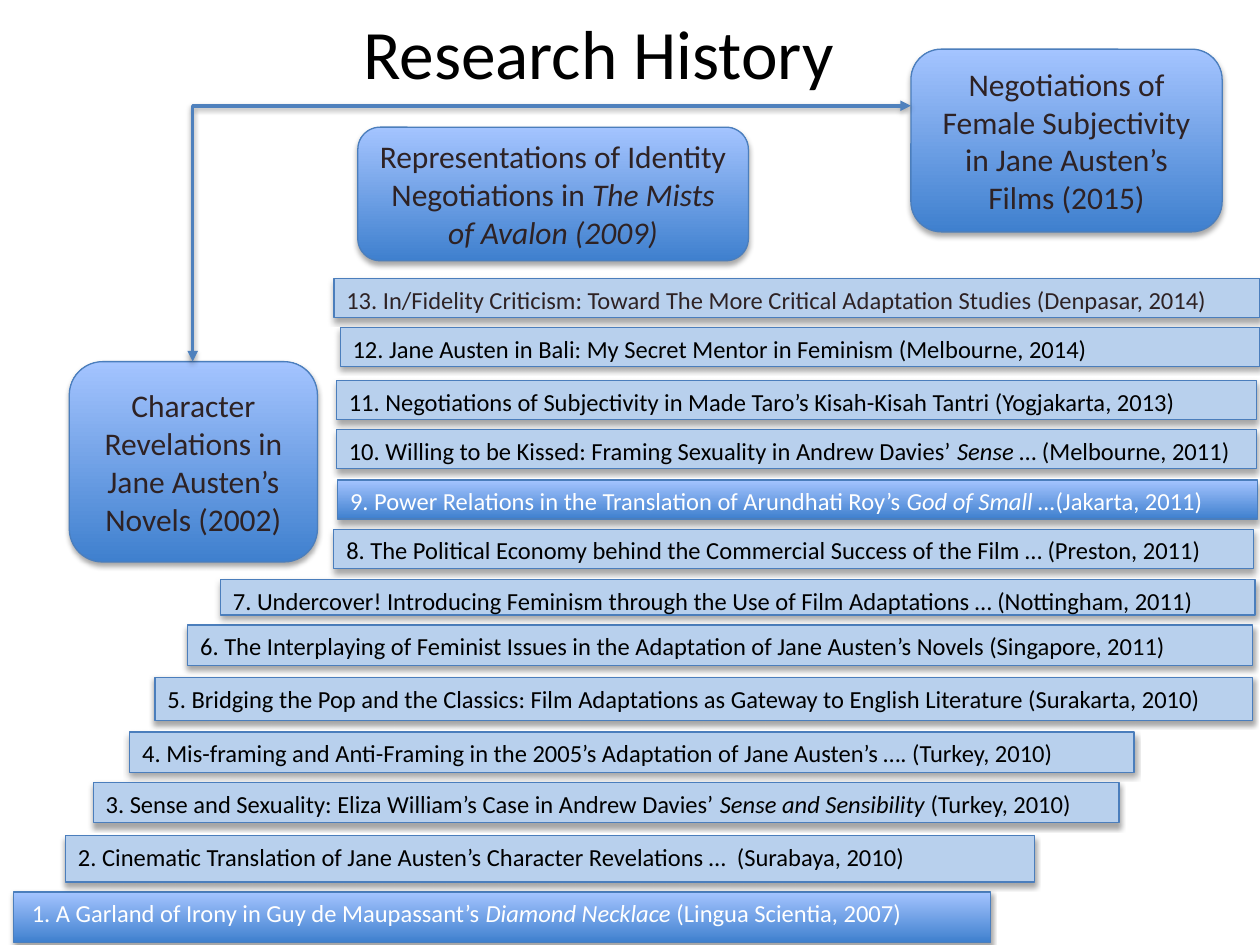
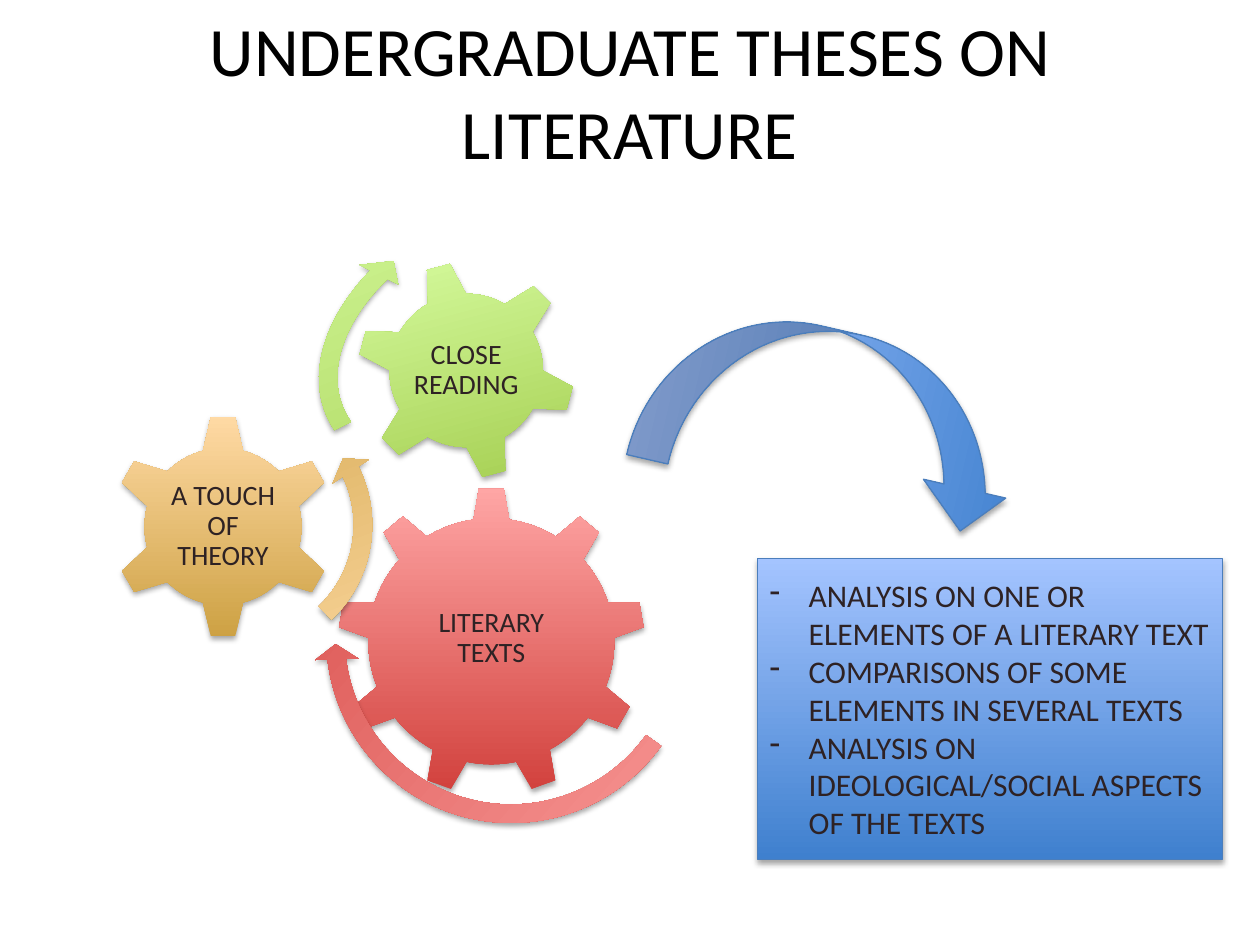
"""Builds two slides on research history and undergraduate theses on literature."""
from dataclasses import dataclass

from lxml import etree
from pptx import Presentation
from pptx.dml.color import RGBColor
from pptx.enum.shapes import MSO_CONNECTOR, MSO_SHAPE
from pptx.enum.text import MSO_ANCHOR, MSO_AUTO_SIZE, PP_ALIGN
from pptx.oxml.ns import qn
from pptx.util import Inches, Pt

ROUNDED = MSO_SHAPE.ROUNDED_RECTANGLE
PROCESS = MSO_SHAPE.FLOWCHART_PROCESS
RECTANGLE = MSO_SHAPE.RECTANGLE
GEAR_SIX = MSO_SHAPE.GEAR_6
GEAR_NINE = MSO_SHAPE.GEAR_9
ARC_RIGHT = MSO_SHAPE.CIRCULAR_ARROW
ARC_LEFT = MSO_SHAPE.LEFT_CIRCULAR_ARROW
SWEEP = MSO_SHAPE.CURVED_LEFT_ARROW
ELBOW = MSO_CONNECTOR.ELBOW
TOP, MIDDLE = MSO_ANCHOR.TOP, MSO_ANCHOR.MIDDLE
LEFT, CENTER = PP_ALIGN.LEFT, PP_ALIGN.CENTER
NO_AUTOFIT = MSO_AUTO_SIZE.NONE


@dataclass(frozen=True)
class Theme:
    font: str = "Calibri"
    black: str = "000000"
    white: str = "FFFFFF"
    ink: str = "2E2224"
    outline: str = "4B7EBC"
    arrow: str = "4F81BD"
    pale: str = "B8D0ED"
    blue: tuple = ("3F80CE", "A4C4FF")
    red: tuple = ("D1403C", "FFA6A5")
    gold: tuple = ("CDA143", "FFDAA5")
    green: tuple = ("A0CA4A", "DAFFA5")
    title_size: float = 39.6
    body_size: int = 18
    gear_size: int = 16
    bar_size: int = 14


THEME = Theme()

TALKS = [
    ("A Garland of Irony in Guy de Maupassant’s *Diamond Necklace *(Lingua Scientia, 2007)",
     (0.11, 7.08, 7.75, 0.4)),
    ("Cinematic Translation of Jane Austen’s Character Revelations …  (Surabaya, 2010)",
     (0.52, 6.63, 7.69, 0.37)),
    ("Sense and Sexuality: Eliza William’s Case in Andrew Davies’ "
     "*Sense and Sensibility *(Turkey, 2010)", (0.74, 6.21, 8.14, 0.32)),
    ("Mis-framing and Anti-Framing in the 2005’s Adaptation of Jane Austen’s …. (Turkey, 2010)",
     (1.03, 5.81, 7.97, 0.32)),
    ("Bridging the Pop and the Classics: Film Adaptations as Gateway to English Literature "
     "(Surakarta, 2010)", (1.23, 5.38, 8.71, 0.34)),
    ("The Interplaying of Feminist Issues in the Adaptation of Jane Austen’s Novels "
     "(Singapore, 2011)", (1.49, 4.96, 8.45, 0.32)),
    ("Undercover! Introducing Feminism through the Use of Film Adaptations … (Nottingham, 2011)",
     (1.75, 4.6, 8.21, 0.28)),
    ("The Political Economy behind the Commercial Success of the Film … (Preston, 2011)",
     (2.65, 4.2, 7.3, 0.31)),
    ("Power Relations in the Translation of Arundhati Roy’s *God of Small …*(Jakarta, 2011)",
     (2.68, 3.81, 7.3, 0.31)),
    ("Willing to be Kissed: Framing Sexuality in Andrew Davies’ *Sense* … (Melbourne, 2011)",
     (2.67, 3.41, 7.3, 0.31)),
    ("Negotiations of Subjectivity in Made Taro’s Kisah-Kisah Tantri (Yogjakarta, 2013)",
     (2.67, 3.02, 7.3, 0.31)),
    ("Jane Austen in Bali: My Secret Mentor in Feminism (Melbourne, 2014)",
     (2.7, 2.6, 7.3, 0.31)),
    ("In/Fidelity Criticism: Toward The More Critical Adaptation Studies (Denpasar, 2014)",
     (2.65, 2.21, 7.35, 0.31)),
]
PUBLISHED = (1, 9)

THESES = [
    ("Negotiations of Female Subjectivity in Jane Austen’s Films (2015)",
     (7.23, 0.39, 2.47, 1.45)),
    ("Representations of Identity Negotiations in *The Mists of Avalon (2009)",
     (2.84, 1.01, 3.1, 1.06)),
    ("Character Revelations in Jane Austen’s Novels (2002)", (0.55, 2.87, 1.97, 1.59)),
]

GEARS = [
    ("LITERARY TEXTS", GEAR_NINE, THEME.red, (2.68, 3.87, 2.44, 2.44), 0,
     (3.17, 4.44, 1.46, 1.26)),
    ("A TOUCH OF THEORY", GEAR_SIX, THEME.gold, (0.88, 3.29, 1.78, 1.78), 0,
     (1.33, 3.74, 0.88, 0.88)),
    ("CLOSE READING", GEAR_SIX, THEME.green, (2.83, 2.07, 1.74, 1.74), 345,
     (3.21, 2.45, 0.98, 0.98)),
]

TURNS = [
    (ARC_RIGHT, THEME.red, (2.49, 3.5, 3.13, 3.13), 131.2,
     (0.047, 2.99, 25.131, 158.679, 0.055)),
    (ARC_LEFT, THEME.gold, (0.78, 3.03, 2.27, 2.27), 159.2,
     (0.065, 4.3, 104.891, 148.378, 0.075)),
    (ARC_RIGHT, THEME.green, (2.36, 1.4, 3.73, 2.45), 338.2,
     (0.06, 3.941, 133.138, 105.082, 0.07)),
]

TOPICS = [
    "ANALYSIS ON ONE OR ELEMENTS OF A LITERARY TEXT",
    "COMPARISONS OF SOME ELEMENTS IN SEVERAL TEXTS",
    "ANALYSIS ON IDEOLOGICAL/SOCIAL ASPECTS OF THE TEXTS",
]


def inches(lengths):
    return [Inches(length) for length in lengths]


def add_node(parent, tag, **attributes):
    node = etree.SubElement(parent, qn(tag))
    for name, value in attributes.items():
        node.set(name, str(value))
    return node


class Builder:
    def __init__(self, deck, theme):
        self.deck = deck
        self.theme = theme
        self.page = None

    def new_page(self, title, at):
        self.page = self.deck.slides.add_slide(self.deck.slide_layouts[5])
        box = self.page.shapes.title
        box.left, box.top, box.width, box.height = inches(at)
        self.fill_text(box, [title], self.theme.title_size, self.theme.black, CENTER, MIDDLE)
        box.text_frame.auto_size = NO_AUTOFIT

    def fill_text(self, box, lines, size, color, align=LEFT, anchor=TOP):
        frame = box.text_frame
        frame.word_wrap = True
        frame.vertical_anchor = anchor
        for index, line in enumerate(lines):
            para = frame.add_paragraph() if index else frame.paragraphs[0]
            para.alignment = align
            for number, part in enumerate(line.split("*")):
                span = para.add_run()
                span.text = part
                span.font.name = self.theme.font
                span.font.size = Pt(size)
                span.font.italic = number % 2 == 1
                span.font.color.rgb = RGBColor.from_string(color)

    def cast_shadow(self, effects, opacity, distance):
        shadow = add_node(effects, "a:outerShdw", blurRad=Pt(3.15), dist=Pt(distance),
                          dir=90 * 60000, rotWithShape=0)
        color = add_node(shadow, "a:srgbClr", val=self.theme.black)
        add_node(color, "a:alpha", val=opacity * 1000)

    def shape(self, preset, at, fill, outlined=True, turn=0, adjust=()):
        shape = self.page.shapes.add_shape(preset, *inches(at))
        shape.rotation = turn
        for index, value in enumerate(adjust):
            shape.adjustments[index] = value
        if isinstance(fill, tuple):
            shape.fill.gradient()
            shape.fill.gradient_angle = 90
            for stop, color in zip(shape.fill.gradient_stops, fill):
                stop.color.rgb = RGBColor.from_string(color)
        else:
            shape.fill.solid()
            shape.fill.fore_color.rgb = RGBColor.from_string(fill)
        if outlined:
            shape.line.color.rgb = RGBColor.from_string(self.theme.outline)
            shape.line.width = Pt(0.75)
        else:
            shape.line.fill.background()
        shape.shadow.inherit = False
        self.cast_shadow(shape.element.spPr.find(qn("a:effectLst")), 35, 1.8)
        return shape

    def bar(self, text, at, fill, color):
        self.fill_text(self.shape(PROCESS, at, fill), [text], self.theme.bar_size, color)

    def card(self, text, at):
        box = self.shape(ROUNDED, at, self.theme.blue)
        self.fill_text(box, [text], self.theme.body_size, self.theme.ink, CENTER, MIDDLE)

    def label(self, text, at):
        box = self.page.shapes.add_textbox(*inches(at))
        self.fill_text(box, [text], self.theme.gear_size, self.theme.ink, CENTER, MIDDLE)
        frame = box.text_frame
        frame.margin_left = frame.margin_right = Inches(0.02)
        frame.margin_top = frame.margin_bottom = Inches(0.02)
        frame.paragraphs[0].line_spacing = 0.9

    def dash_list(self, lines, at):
        box = self.shape(RECTANGLE, at, self.theme.blue)
        self.fill_text(box, lines, self.theme.body_size, self.theme.ink, LEFT, MIDDLE)
        for para in box.text_frame.paragraphs:
            settings = para._p.get_or_add_pPr()
            settings.set("marL", str(Inches(0.31)))
            settings.set("indent", str(Inches(-0.31)))
            add_node(settings, "a:buFontTx")
            add_node(settings, "a:buChar", char="-")

    def corner_arrow(self, start, end):
        middle_x, middle_y = (start[0] + end[0]) / 2, (start[1] + end[1]) / 2
        half_x, half_y = (start[1] - end[1]) / 2, (end[0] - start[0]) / 2
        arrow = self.page.shapes.add_connector(ELBOW, *inches((
            middle_x + half_x, middle_y + half_y, middle_x - half_x, middle_y - half_y)))
        arrow.line.color.rgb = RGBColor.from_string(self.theme.arrow)
        arrow.line.width = Pt(2)
        properties = arrow.element.spPr
        properties.find(qn("a:xfrm")).set("rot", str(90 * 60000))
        properties.find(qn("a:prstGeom")).set("prst", "bentConnector2")
        for tag in ("a:headEnd", "a:tailEnd"):
            add_node(properties.find(qn("a:ln")), tag, type="triangle")
        self.cast_shadow(add_node(properties, "a:effectLst"), 38, 1.6)


def build_history(builder):
    theme = builder.theme
    builder.new_page("Research History", (0.05, 0.03, 9.4, 0.76))
    for text, at in THESES:
        builder.card(text, at)
    builder.corner_arrow((1.53, 2.87), (7.23, 0.84))
    for number, (text, at) in enumerate(TALKS, 1):
        published = number in PUBLISHED
        color = theme.white if published else theme.black
        if number == len(TALKS):
            color = theme.ink
        lead = " " if number == 1 else ""
        builder.bar(f"{lead}{number}. {text}", at, theme.blue if published else theme.pale, color)


def build_theses(builder):
    builder.new_page("UNDERGRADUATE THESES ON LITERATURE", (0.3, 0.25, 9.4, 0.93))
    for text, preset, fill, at, turn, label_at in GEARS:
        builder.shape(preset, at, fill, outlined=False, turn=turn)
        builder.label(text, label_at)
    for preset, fill, at, turn, adjust in TURNS:
        builder.shape(preset, at, fill, outlined=False, turn=turn, adjust=adjust)
    builder.shape(SWEEP, (5.94, 1.77, 1.34, 3.05), builder.theme.blue, turn=282.9)
    builder.dash_list(TOPICS, (6.01, 4.43, 3.69, 2.39))


def main():
    deck = Presentation()
    deck.slide_width, deck.slide_height = Inches(10), Inches(7.5)
    builder = Builder(deck, THEME)
    build_history(builder)
    build_theses(builder)
    deck.save("out.pptx")


if __name__ == "__main__":
    main()
